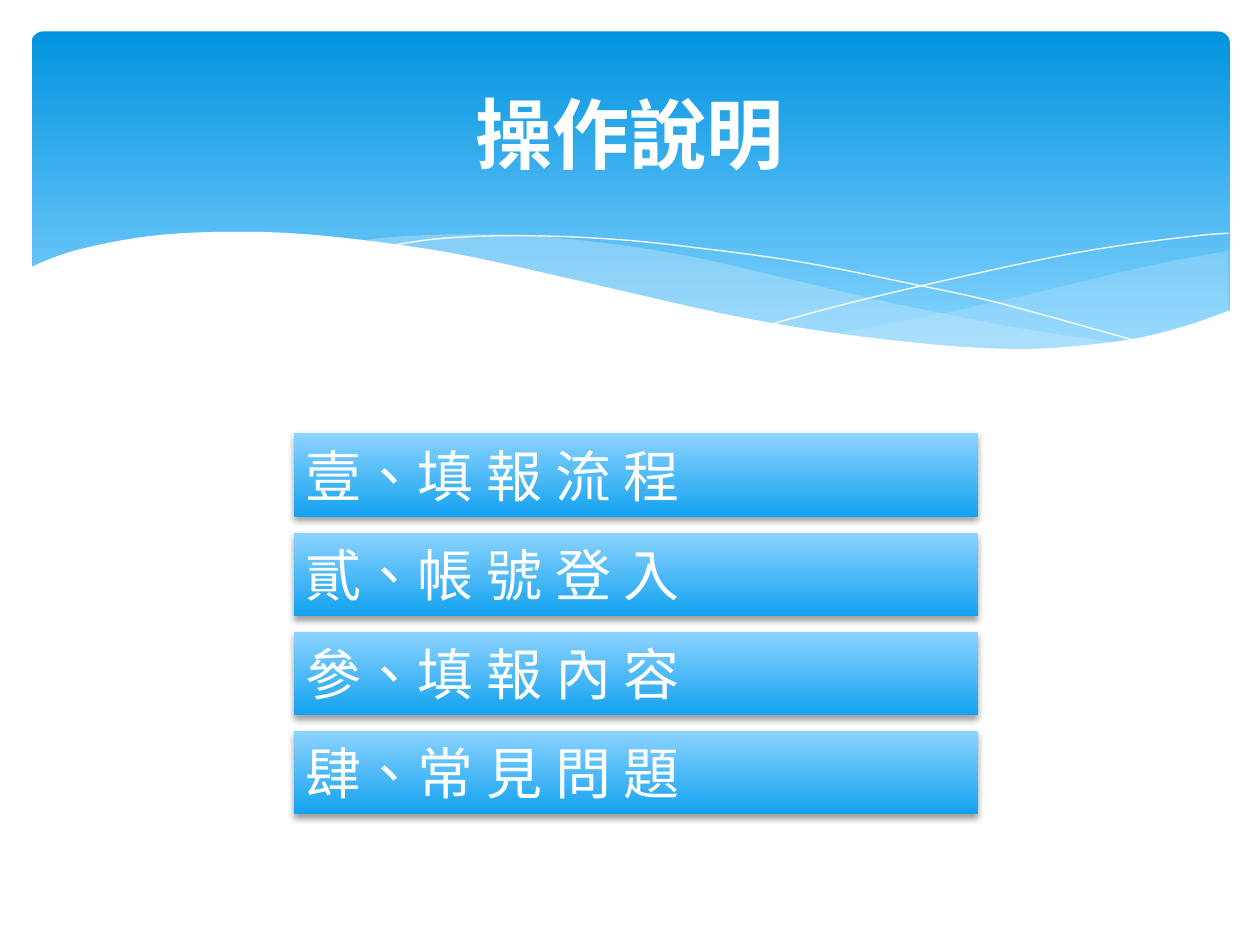
from lxml import etree
from pptx import Presentation
from pptx.dml.color import RGBColor
from pptx.enum.lang import MSO_LANGUAGE_ID
from pptx.enum.shapes import MSO_SHAPE
from pptx.enum.text import MSO_ANCHOR, PP_ALIGN
from pptx.oxml import parse_xml
from pptx.oxml.ns import qn
from pptx.util import Inches, Pt

RECTANGLE = MSO_SHAPE.RECTANGLE
ROUNDED = MSO_SHAPE.ROUNDED_RECTANGLE
MIDDLE = MSO_ANCHOR.MIDDLE
LEFT, CENTER = PP_ALIGN.LEFT, PP_ALIGN.CENTER
CHINESE = MSO_LANGUAGE_ID.TRADITIONAL_CHINESE
WHITE, MIST = "FFFFFF", "C6E7FC"
TITLE_FONT, BODY_FONT = "Calibri", "Noto Sans CJK SC"
TITLE = "操作說明"
TOPICS = ["壹、填 報 流 程", "貳、帳 號 登 入", "參、填 報 內 容", "肆、常 見 問 題"]

RIGHT_WAVE_TOP = [(9.5, 1.74), (8.96, 1.84), (8.36, 1.98), (7.54, 2.17), (6.81, 2.32), (6.36, 2.4)]
RIGHT_WAVE_BOTTOM = [(6.36, 2.4), (6.93, 2.47), (7.44, 2.52), (7.99, 2.52), (8.47, 2.49),
                     (8.96, 2.4), (9.5, 2.22)]
LONG_WAVE_TOP = [(8.68, 2.48), (7.82, 2.35), (6.81, 2.15), (6.04, 1.97), (5.3, 1.8),
                 (4.64, 1.69), (3.95, 1.62), (3.36, 1.61), (2.88, 1.63), (2.61, 1.66)]
LONG_WAVE_BOTTOM = [(2.61, 1.66), (3.17, 1.74), (3.79, 1.86), (4.24, 1.97), (5.05, 2.15),
                    (5.93, 2.33), (6.7, 2.45), (7.36, 2.52), (7.93, 2.53), (8.32, 2.52), (8.68, 2.48)]
FALLING_LINE = [(2.84, 1.7), (3.28, 1.64), (3.91, 1.62), (4.64, 1.65), (5.31, 1.72),
                (6.11, 1.83), (7.02, 2.01), (7.7, 2.16), (8.82, 2.47)]
RISING_LINE = [(5.88, 2.32), (6.47, 2.16), (7.23, 1.98), (8.11, 1.79), (8.7, 1.69),
               (9.26, 1.62), (9.5, 1.6)]
CREST = [(9.52, 2.21), (9.15, 2.34), (8.74, 2.44), (8.25, 2.5), (7.84, 2.52), (7.36, 2.5),
         (6.83, 2.45), (6.22, 2.37), (5.54, 2.25), (4.78, 2.08), (4.22, 1.95), (3.4, 1.77),
         (2.67, 1.66), (2.05, 1.6), (1.52, 1.59), (1.07, 1.61), (0.7, 1.66), (0.34, 1.74),
         (0.11, 1.82), (-0.02, 1.88)]
CREST_BASE = [(-0.02, 3.04), (9.52, 3.04)]


def color(value):
    return RGBColor.from_string(value)


def smooth(points, steps=6):
    padded = [points[0], *points, points[-1]]
    curve = [points[0]]
    for a, b, c, d in zip(padded, padded[1:], padded[2:], padded[3:]):
        for step in range(1, steps + 1):
            t = step / steps
            curve.append(tuple(
                q + t / 2 * (r - p + t * (2 * p - 5 * q + 4 * r - s + t * (3 * (q - r) + s - p)))
                for p, q, r, s in zip(a, b, c, d)))
    return curve


def fill_gradient(shape, top, bottom, end=1):
    shape.fill.gradient()
    shape.fill.gradient_angle = 270
    for stop, value, position in zip(shape.fill.gradient_stops, (top, bottom), (0, end)):
        stop.color.rgb = color(value)
        stop.position = position
    shape.line.fill.background()
    shape.shadow.inherit = False


def add_outline(page, box, points, closed):
    left, top = box[:2]
    spots = [(Inches(left + x), Inches(top + y)) for x, y in points]
    builder = page.shapes.build_freeform(*spots[0], scale=1.0)
    builder.add_line_segments(spots[1:], close=closed)
    shape = builder.convert_to_shape()
    shape.shadow.inherit = False
    return shape


def add_wave(page, box, points, fill, opacity=100):
    shape = add_outline(page, box, points, True)
    shape.fill.solid()
    shape.fill.fore_color.rgb = color(fill)
    shape.line.fill.background()
    if opacity < 100:
        tone = shape.fill._xPr.find(".//" + qn("a:srgbClr"))
        etree.SubElement(tone, qn("a:alpha")).set("val", str(opacity * 1000))


def add_curve(page, box, points):
    shape = add_outline(page, box, smooth(points), False)
    shape.fill.background()
    shape.line.color.rgb = color(WHITE)
    shape.line.width = Pt(0)


def add_banner(page, box):
    banner = page.shapes.add_shape(ROUNDED, *map(Inches, box))
    banner.adjustments[0] = 0.034
    fill_gradient(banner, "0293E0", "83D3FE", 0.9)
    add_wave(page, box, smooth(RIGHT_WAVE_TOP) + smooth(RIGHT_WAVE_BOTTOM), MIST, 29)
    add_wave(page, box, smooth(LONG_WAVE_TOP) + smooth(LONG_WAVE_BOTTOM), MIST, 40)
    add_curve(page, box, FALLING_LINE)
    add_curve(page, box, RISING_LINE)
    add_wave(page, box, smooth(CREST) + CREST_BASE, WHITE)


def write_text(shape, text, font, size, align, bold=False):
    frame = shape.text_frame
    frame.word_wrap = True
    frame.vertical_anchor = MIDDLE
    para = frame.paragraphs[0]
    para.alignment = align
    span = para.add_run()
    span.text = text
    span.font.name = font
    span.font.size = Pt(size)
    span.font.bold = bold
    span.font.color.rgb = color(WHITE)
    span.font.language_id = CHINESE


def add_title(page, box):
    title = page.shapes.title
    title.left, title.top, title.width, title.height = map(Inches, box)
    write_text(title, TITLE, TITLE_FONT, 44, CENTER, True)
    page.shapes._spTree.append(title._element)


def add_shadow(shape):
    effects = shape._element.spPr.find(qn("a:effectLst"))
    effects.append(parse_xml(
        '<a:outerShdw xmlns:a="http://schemas.openxmlformats.org/drawingml/2006/main"'
        f' blurRad="{Pt(4)}" dist="{Pt(2)}" dir="5400000" rotWithShape="0">'
        '<a:srgbClr val="000000"><a:alpha val="38000"/></a:srgbClr></a:outerShdw>'))


def add_topics(page, box, bar_height=0.66):
    left, top, width, height = box
    pitch = (height - bar_height) / (len(TOPICS) - 1)
    for row, topic in enumerate(TOPICS):
        place = (left, top + row * pitch, width, bar_height)
        bar = page.shapes.add_shape(RECTANGLE, *map(Inches, place))
        fill_gradient(bar, "8CD3FF", "14A2EF")
        add_shadow(bar)
        write_text(bar, topic, BODY_FONT, 32, LEFT)


def main():
    deck = Presentation()
    deck.slide_width, deck.slide_height = Inches(10), Inches(7.5)
    page = deck.slides.add_slide(deck.slide_layouts[5])
    add_banner(page, (0.25, 0.25, 9.51, 2.7))
    add_title(page, (0.5, 0.37, 9, 1.37))
    add_topics(page, (2.33, 3.44, 5.43, 3.02))
    deck.save("out.pptx")


if __name__ == "__main__":
    main()
